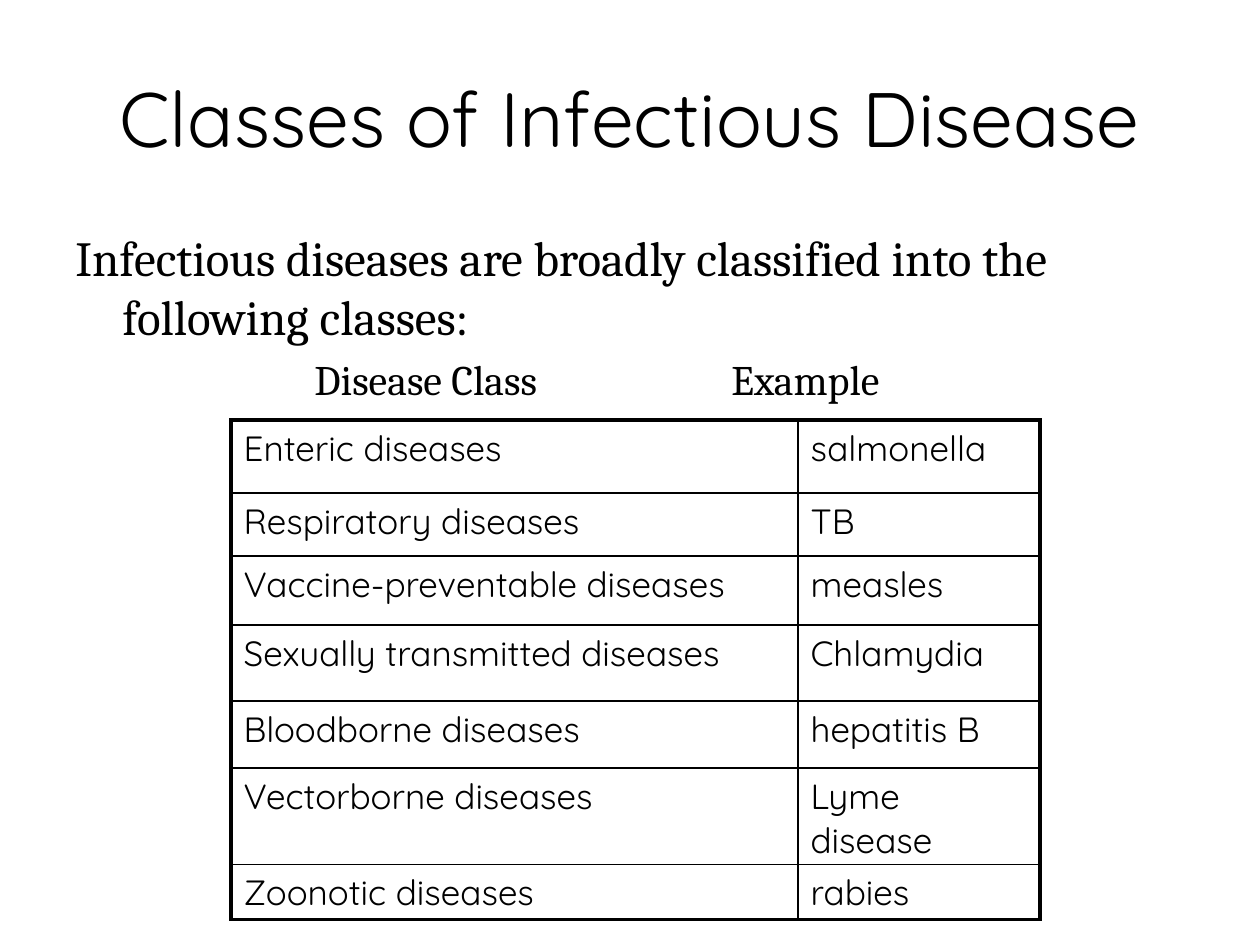
"""Build a slide that lists the classes of infectious disease with examples."""
import dataclasses

import lxml.etree
import pptx
import pptx.dml.color
import pptx.enum.text
import pptx.oxml.ns
import pptx.util

TITLE = "Classes of Infectious Disease"
INTRODUCTION = "Infectious diseases are broadly classified into the following classes:"
HEADINGS = ("Disease Class", "Example")
DISEASES = [
    ("Enteric diseases", "salmonella"),
    ("Respiratory diseases", "TB"),
    ("Vaccine-preventable diseases", "measles"),
    ("Sexually transmitted diseases", "Chlamydia"),
    ("Bloodborne diseases", "hepatitis B"),
    ("Vectorborne diseases", "Lyme disease"),
    ("Zoonotic diseases", "rabies"),
]

SLIDE_SIZE = (1260, 945)
TITLE_BOX = (63, 38, 1134, 158)
BODY_BOX = (63, 221, 1176, 624)
TABLE_ORIGIN = (231, 420)
COLUMN_WIDTHS = (567, 242)
ROW_HEIGHTS = (73, 63, 69, 76, 67, 63, 52)
HEADING_TABS = (239, 656)
HANGING_INDENT = 47


@dataclasses.dataclass(frozen=True)
class Theme:
    """Colours, fonts and type sizes of the slide."""
    ink: str = "000000"
    sans: str = "Quicksand"
    serif: str = "Cambria"
    title: int = 44
    body: int = 28
    heading: int = 24
    cell: int = 20
    outer_border: float = 2.25
    inner_border: float = 1


THEME = Theme()


def px(length):
    """Turn pixels into EMU."""
    return pptx.util.Emu(round(length * 914400 / 126))


def add_element(parent, tag, **attributes):
    """Append a DrawingML element with the given attributes."""
    values = {name: str(value) for name, value in attributes.items()}
    return lxml.etree.SubElement(parent, pptx.oxml.ns.qn(tag), values)


def write(paragraph, text, font, size):
    """Add a formatted run to a paragraph."""
    run = paragraph.add_run()
    run.text = text
    formats = {"name": font, "size": pptx.util.Pt(size)}
    for name, value in formats.items():
        setattr(run.font, name, value)
    run.font.color.rgb = pptx.dml.color.RGBColor.from_string(THEME.ink)


def space_before(paragraph):
    """Set the space before a paragraph to 20 percent of a line."""
    properties = paragraph._p.get_or_add_pPr()
    add_element(add_element(properties, "a:spcBef"), "a:spcPct", val=20000)
    return properties


def add_text_box(slide, box, anchor):
    """Add a wrapping text box and return its text frame."""
    frame = slide.shapes.add_textbox(*map(px, box)).text_frame
    frame.word_wrap = True
    frame.vertical_anchor = anchor
    return frame


def add_body(slide):
    """Add the introduction and the headings above the table."""
    frame = add_text_box(slide, BODY_BOX, pptx.enum.text.MSO_ANCHOR.TOP)
    introduction = frame.paragraphs[0]
    properties = space_before(introduction)
    properties.set("marL", str(px(HANGING_INDENT)))
    properties.set("indent", str(-px(HANGING_INDENT)))
    write(introduction, INTRODUCTION, THEME.serif, THEME.body)

    headings = frame.add_paragraph()
    tabs = add_element(space_before(headings), "a:tabLst")
    for position in HEADING_TABS:
        add_element(tabs, "a:tab", pos=px(position), algn="l")
    text = "".join("\t" + heading for heading in HEADINGS)
    write(headings, text, THEME.serif, THEME.heading)


def set_borders(cell, outer_sides):
    """Draw the four borders of a cell, thicker on the outer sides."""
    properties = cell._tc.get_or_add_tcPr()
    for index, (side, outer) in enumerate(outer_sides.items()):
        width = THEME.outer_border if outer else THEME.inner_border
        line = lxml.etree.Element(pptx.oxml.ns.qn("a:ln" + side), w=str(pptx.util.Pt(width)))
        add_element(add_element(line, "a:solidFill"), "a:srgbClr", val=THEME.ink)
        properties.insert(index, line)


def add_disease_table(slide):
    """Add the table of disease classes and examples."""
    size = (sum(COLUMN_WIDTHS), sum(ROW_HEIGHTS))
    row_count, column_count = len(DISEASES), len(HEADINGS)
    table = slide.shapes.add_table(
        row_count, column_count, *map(px, TABLE_ORIGIN + size)).table
    for name in ("first_row", "horz_banding"):
        setattr(table, name, False)
    for column, width in zip(table.columns, COLUMN_WIDTHS):
        column.width = px(width)
    for row, height in zip(table.rows, ROW_HEIGHTS):
        row.height = px(height)
    for row, texts in enumerate(DISEASES):
        for column, text in enumerate(texts):
            cell = table.cell(row, column)
            cell.fill.background()
            set_borders(cell, {
                "L": column == 0,
                "R": column == column_count - 1,
                "T": row == 0,
                "B": row == row_count - 1,
            })
            paragraph = cell.text_frame.paragraphs[0]
            space_before(paragraph)
            write(paragraph, text, THEME.sans, THEME.cell)


def main():
    """Build and save the presentation."""
    presentation = pptx.Presentation()
    presentation.slide_width, presentation.slide_height = map(px, SLIDE_SIZE)
    slide = presentation.slides.add_slide(presentation.slide_layouts[6])
    frame = add_text_box(slide, TITLE_BOX, pptx.enum.text.MSO_ANCHOR.MIDDLE)
    title = frame.paragraphs[0]
    title.alignment = pptx.enum.text.PP_ALIGN.CENTER
    write(title, TITLE, THEME.sans, THEME.title)
    add_body(slide)
    add_disease_table(slide)
    presentation.save("out.pptx")


if __name__ == "__main__":
    main()
